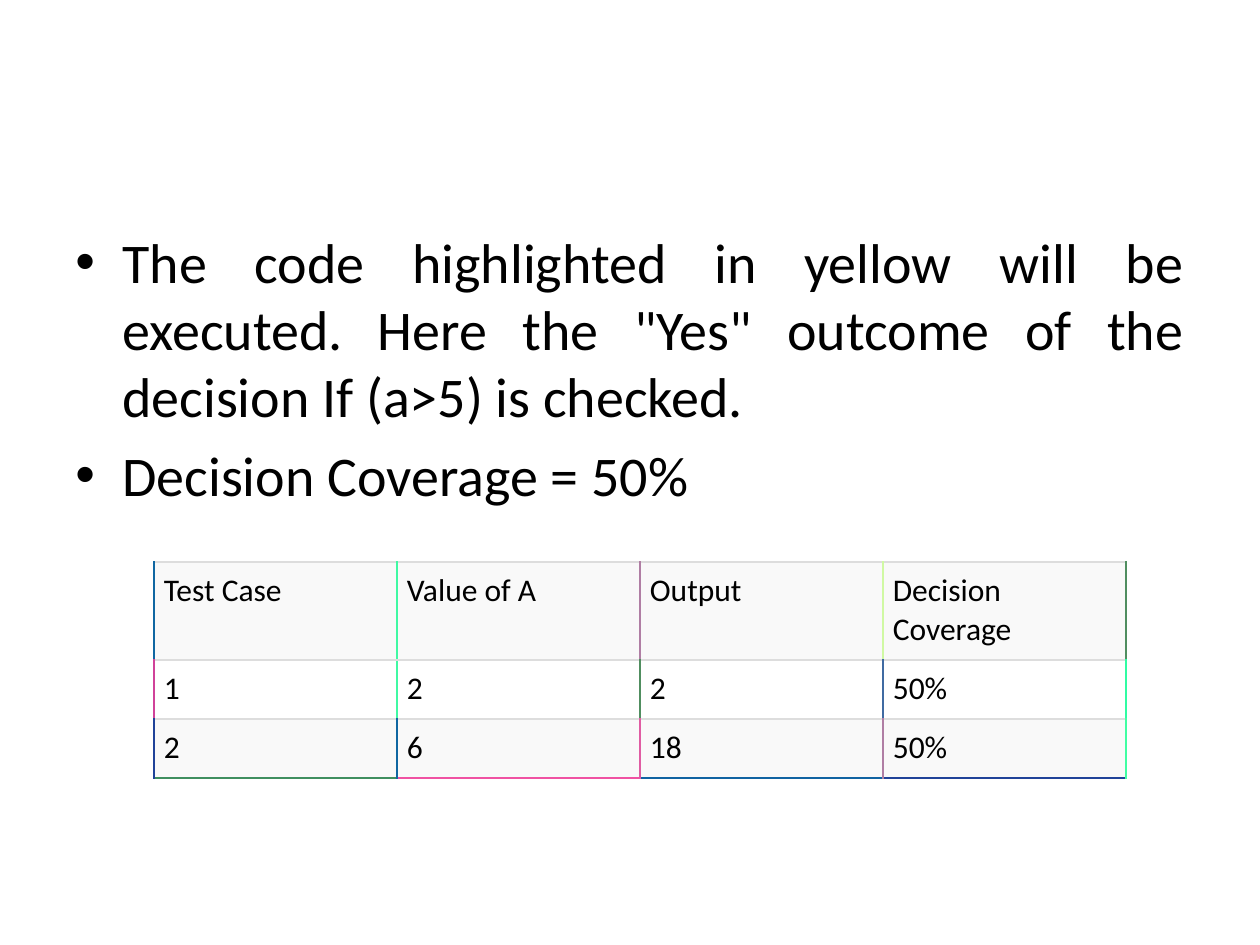
from lxml.etree import SubElement
from pptx import Presentation
from pptx.dml.color import RGBColor as RGB
from pptx.enum.text import PP_ALIGN as Align
from pptx.oxml.ns import qn
from pptx.util import Emu, Pt

PX = 914400 / 126

BLACK = RGB(0x00, 0x00, 0x00)
WHITE = RGB(0xFF, 0xFF, 0xFF)
BAND = RGB(0xF9, 0xF9, 0xF9)
RULE = RGB(0xDD, 0xDD, 0xDD)
AQUA = RGB(0x40, 0xF9, 0xA3)
MINT = RGB(0x30, 0xFC, 0xA3)
SPRING = RGB(0x40, 0xFE, 0xA3)
LIME = RGB(0xD0, 0xF9, 0xA3)
MAUVE = RGB(0xB0, 0x7E, 0xA4)
PINK = RGB(0xE0, 0x5C, 0xA3)
ROSE = RGB(0xF0, 0x52, 0xA3)
MAGENTA = RGB(0xD0, 0x42, 0x99)
GREEN = RGB(0x50, 0x8E, 0x60)
LEAF = RGB(0x40, 0x8F, 0x60)
BLUE = RGB(0x10, 0x67, 0xA2)
OCEAN = RGB(0x10, 0x63, 0xA2)
STEEL = RGB(0x40, 0x6B, 0xA2)
NAVY = RGB(0x20, 0x43, 0x99)


def px(length):
    return Emu(round(length * PX))


class Deck:
    font = "Calibri"
    body_size = 32
    table_size = 18
    indent = 47
    cell_margin = 10

    def __init__(self, width, height):
        self.prs = Presentation()
        self.prs.slide_width, self.prs.slide_height = px(width), px(height)
        self.slide = self.prs.slides.add_slide(self.prs.slide_layouts[6])

    def text_run(self, paragraph, text, size):
        run = paragraph.add_run()
        run.text = text
        run.font.name = self.font
        run.font.size = Pt(size)
        run.font.color.rgb = BLACK

    def bullets(self, left, top, width, height, points):
        frame = self.slide.shapes.add_textbox(
            px(left), px(top), px(width), px(height)).text_frame
        frame.word_wrap = True
        for i, point in enumerate(points):
            paragraph = frame.paragraphs[0] if i == 0 else frame.add_paragraph()
            paragraph.alignment = Align.JUSTIFY
            paragraph.space_before = Pt(self.body_size * 0.2)
            props = paragraph._p.get_or_add_pPr()
            props.set("marL", str(px(self.indent)))
            props.set("indent", str(-px(self.indent)))
            SubElement(props, qn("a:buFont"), typeface="Arial")
            SubElement(props, qn("a:buChar"), char="•")
            self.text_run(paragraph, point, self.body_size)

    def border(self, cell, side, color, width):
        line = SubElement(cell._tc.get_or_add_tcPr(), qn(f"a:ln{side}"),
                          w=str(Pt(width)))
        fill = SubElement(line, qn("a:solidFill"))
        SubElement(fill, qn("a:srgbClr"), val=str(color))

    def cell(self, cell, text, fill, borders):
        cell.margin_left = cell.margin_right = px(self.cell_margin)
        cell.margin_top = cell.margin_bottom = px(self.cell_margin)
        for side, (color, width) in borders.items():
            self.border(cell, side, color, width)
        cell.fill.solid()
        cell.fill.fore_color.rgb = fill
        self.text_run(cell.text_frame.paragraphs[0], text, self.table_size)

    def table(self, left, top, col_width, row_heights, rows, verticals, bottom):
        cols = len(rows[0])
        table = self.slide.shapes.add_table(
            len(rows), cols, px(left), px(top),
            px(col_width * cols), px(sum(row_heights))).table
        for column in table.columns:
            column.width = px(col_width)
        for r, texts in enumerate(rows):
            table.rows[r].height = px(row_heights[r])
            last = r == len(rows) - 1
            for c, text in enumerate(texts):
                borders = {
                    "L": (verticals[r][c], 1),
                    "R": (verticals[r][c + 1], 1),
                    "T": (RULE, 0.75),
                    "B": (bottom[c], 1) if last else (RULE, 0.75),
                }
                self.cell(table.cell(r, c), text, WHITE if r % 2 else BAND, borders)


def main():
    deck = Deck(1260, 945)

    # Findings
    deck.bullets(63, 221, 1134, 624, [
        'The code highlighted in yellow will be executed. Here the "Yes" '
        "outcome of the decision If (a>5) is checked.",
        "Decision Coverage = 50%",
    ])

    # Coverage by test case
    results = [
        ["Test Case", "Value of A", "Output", "Decision Coverage"],
        ["1", "2", "2", "50%"],
        ["2", "6", "18", "50%"],
    ]
    # Vertical rules of each row, from left to right
    verticals = [
        [BLUE, AQUA, MAUVE, LIME, GREEN],
        [MAGENTA, AQUA, GREEN, STEEL, MINT],
        [NAVY, BLUE, PINK, MAUVE, SPRING],
    ]
    bottom = [LEAF, ROSE, OCEAN, NAVY]
    deck.table(154, 562, 243, [98, 59, 59], results, verticals, bottom)

    deck.prs.save("out.pptx")


if __name__ == "__main__":
    main()
